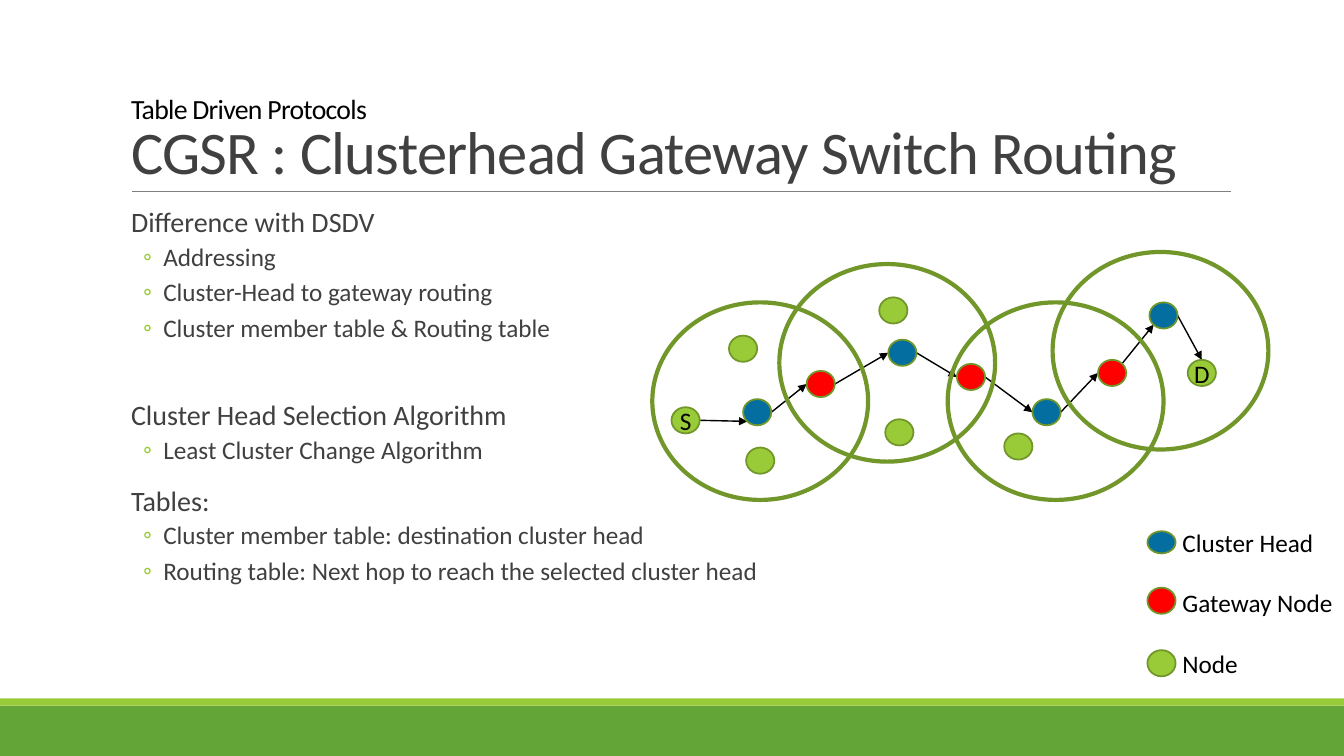
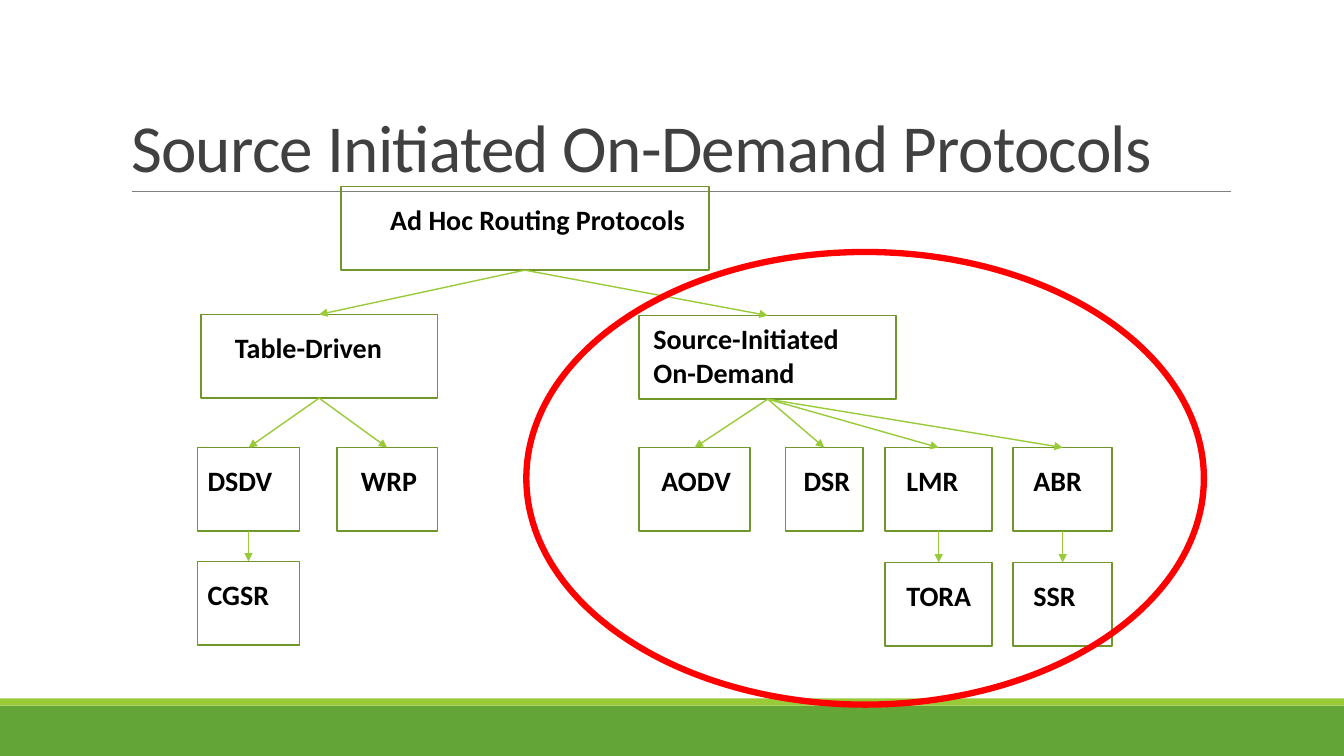
"""Build two slides on ad hoc routing protocols."""
from dataclasses import dataclass
from enum import Enum

import lxml.etree
import pptx
import pptx.dml.color
import pptx.enum.shapes
import pptx.enum.text
import pptx.oxml.ns
import pptx.shapes.autoshape
import pptx.shapes.connector
import pptx.slide
import pptx.text.text
import pptx.util

Inches = pptx.util.Inches
Pt = pptx.util.Pt
qn = pptx.oxml.ns.qn
Shape = pptx.enum.shapes.MSO_SHAPE
Anchor = pptx.enum.text.MSO_ANCHOR
Align = pptx.enum.text.PP_ALIGN

FONT = "Calibri"
BLACK, INK, GREY = "000000", "404040", "808080"
GREEN, LIME, OLIVE = "63A537", "99CB38", "719629"
BLUE, RED = "056EA0", "FF0000"
NODE_W, NODE_H = 0.28, 0.26
CLUSTER_W, CLUSTER_H = 2.14, 1.96
BOX_H = 0.83


class Site(Enum):
    """Points on an ellipse as fractions of its width and height."""
    TOP = (0.5, 0)
    LEFT = (0, 0.5)
    RIGHT = (1, 0.5)
    LOWER_LEFT = (0.15, 0.85)
    UPPER_RIGHT = (0.85, 0.15)


@dataclass(frozen=True)
class Node:
    """A network node in the cluster diagram."""
    left: float
    top: float
    color: str = LIME
    label: str = ""

    def point(self, site: Site) -> tuple[float, float]:
        """Return the position of a site in inches."""
        fx, fy = site.value
        return self.left + fx * NODE_W, self.top + fy * NODE_H


@dataclass(frozen=True)
class Hop:
    """One step of the route between two nodes."""
    start: Node
    end: Node
    leave: Site = Site.RIGHT
    enter: Site = Site.LEFT


@dataclass(frozen=True)
class Box:
    """A box of the protocol tree, with its text insets."""
    name: str
    left: float
    top: float
    width: float
    inset: float
    parent: str = ""
    inset_top: float = 0.16
    inset_right: float = 0


@dataclass(frozen=True)
class Line:
    """A line of the outline."""
    text: str
    level: int = 1
    before: float = 2


SOURCE = Node(6.66, 4.04, label="S")
HEAD_1 = Node(7.37, 3.96, BLUE)
GATE_1 = Node(8, 3.68, RED)
HEAD_2 = Node(8.81, 3.37, BLUE)
GATE_2 = Node(9.49, 3.61, RED)
HEAD_3 = Node(10.24, 3.96, BLUE)
GATE_3 = Node(10.89, 3.57, RED)
HEAD_4 = Node(11.4, 3, BLUE)
DEST = Node(11.78, 3.57, label="D")
ROUTE = [SOURCE, HEAD_1, GATE_1, HEAD_2, GATE_2, HEAD_3, GATE_3, HEAD_4, DEST]
MEMBERS = [Node(7.4, 4.44), Node(7.23, 3.33), Node(8.72, 2.95),
           Node(8.78, 4.16), Node(9.96, 4.3)]
HOPS = [
    Hop(SOURCE, HEAD_1, enter=Site.LOWER_LEFT),
    *(Hop(a, b) for a, b in zip(ROUTE[1:6], ROUTE[2:7])),
    Hop(GATE_3, HEAD_4, Site.UPPER_RIGHT, Site.LOWER_LEFT),
    Hop(HEAD_4, DEST, enter=Site.TOP),
]
CLUSTERS = [(6.47, 3), (7.73, 2.62), (9.4, 3), (10.44, 2.5)]
LEGEND = [("Cluster Head", BLUE, 5.27, 0.22),
          ("Gateway Node", RED, 5.83, NODE_H),
          ("Node", LIME, 6.45, NODE_H)]
OUTLINE = [
    Line("Difference with DSDV", 0, 0),
    Line("Addressing"),
    Line("Cluster-Head to gateway routing"),
    Line("Cluster member table & Routing table"),
    Line("Cluster Head Selection Algorithm", 0, 38),
    Line("Least Cluster Change Algorithm"),
    Line("Tables:", 0, 12),
    Line("Cluster member table: destination cluster head"),
    Line("Routing table: Next hop to reach the selected cluster head"),
]
ROOT, TABLE, DEMAND = ("Ad Hoc Routing Protocols", "Table-Driven",
                       "Source-Initiated On-Demand")
TREE = [
    Box(ROOT, 3.38, 1.85, 3.65, 0.49),
    Box(DEMAND, 6.34, 3.13, 2.55, 0.14, ROOT, 0.06, 0.42),
    Box(TABLE, 1.99, 3.12, 2.35, 0.34, ROOT),
    Box("DSDV", 1.96, 4.44, 1.01, 0.1, TABLE),
    Box("WRP", 3.34, 4.44, 1, 0.24, TABLE),
    Box("AODV", 6.34, 4.44, 1.1, 0.22, DEMAND),
    Box("DSR", 7.79, 4.44, 0.77, 0.18, DEMAND),
    Box("LMR", 8.78, 4.44, 1.06, 0.21, DEMAND),
    Box("ABR", 10.05, 4.44, 0.98, 0.2, DEMAND),
    Box("TORA", 8.78, 5.58, 1.06, 0.21, "LMR"),
    Box("SSR", 10.05, 5.58, 0.98, 0.2, "ABR"),
    Box("CGSR", 1.96, 5.57, 1.01, 0.1, "DSDV"),
]


def rgb(color: str) -> pptx.dml.color.RGBColor:
    """Turn a hex string into a colour."""
    return pptx.dml.color.RGBColor.from_string(color)


def write(p: pptx.text.text._Paragraph, text: str, *, size: float = 18,
          color: str = BLACK, bold: bool = False, spacing: int = 0) -> None:
    """Add a formatted run to a paragraph."""
    r = p.add_run()
    r.text = text
    r.font.name, r.font.size, r.font.bold = FONT, Pt(size), bold
    r.font.color.rgb = rgb(color)
    if spacing:
        r.font.element.set("spc", str(spacing)) if hasattr(r.font, "element") else \
            r._r.get_or_add_rPr().set("spc", str(spacing))


def set_insets(tf: pptx.text.text.TextFrame, left: float, top: float,
               right: float, bottom: float) -> None:
    """Set the four text insets in inches."""
    tf.margin_left, tf.margin_top = Inches(left), Inches(top)
    tf.margin_right, tf.margin_bottom = Inches(right), Inches(bottom)


def add_shape(s: pptx.slide.Slide, kind: Shape, left: float, top: float,
              width: float, height: float, *, fill: str = "", line: str = "",
              weight: float = 1.25) -> pptx.shapes.autoshape.Shape:
    """Draw a flat preset shape."""
    sp = s.shapes.add_shape(kind, Inches(left), Inches(top),
                            Inches(width), Inches(height))
    sp.shadow.inherit = False
    if fill:
        sp.fill.solid()
        sp.fill.fore_color.rgb = rgb(fill)
    else:
        sp.fill.background()
    if line:
        sp.line.color.rgb = rgb(line)
        sp.line.width = Pt(weight)
    else:
        sp.line.fill.background()
    return sp


def add_line(s: pptx.slide.Slide, start: tuple[float, float],
             end: tuple[float, float], color: str, weight: float = 1,
             arrow: bool = True) -> pptx.shapes.connector.Connector:
    """Draw a straight line, with an arrowhead at its end if asked."""
    c = s.shapes.add_connector(pptx.enum.shapes.MSO_CONNECTOR.STRAIGHT,
                               *(Inches(v) for v in (*start, *end)))
    c.line.color.rgb = rgb(color)
    c.line.width = Pt(weight)
    props = c.element.spPr
    if arrow:
        lxml.etree.SubElement(props.find(qn("a:ln")), qn("a:tailEnd"), type="triangle")
    lxml.etree.SubElement(props, qn("a:effectLst"))
    return c


def add_textbox(s: pptx.slide.Slide, left: float, top: float, width: float,
                height: float) -> pptx.text.text.TextFrame:
    """Add a wrapping text box and return its frame."""
    tf = s.shapes.add_textbox(Inches(left), Inches(top),
                              Inches(width), Inches(height)).text_frame
    tf.word_wrap = True
    return tf


def dress_layout(layout: pptx.slide.SlideLayout, s: pptx.slide.Slide) -> None:
    """Put the bands and title rule on the layout that slides share."""
    for ph in list(layout.placeholders)[1:]:
        layout.shapes.element.remove(ph.element)
    decor = [
        add_shape(s, Shape.RECTANGLE, 0, 7, 13.33, 0.5, fill=GREEN),
        add_shape(s, Shape.RECTANGLE, 0, 6.93, 13.33, 0.07, fill=LIME),
        add_line(s, (1.31, 1.9), (12.21, 1.9), GREY, 0.5, arrow=False),
    ]
    for item in decor:
        layout.shapes.element.append(item.element)


def set_title(s: pptx.slide.Slide, *lines: tuple[str, float, str]) -> None:
    """Place the title and write its lines of text, size and colour."""
    sp = s.shapes.title
    sp.left, sp.top = Inches(1.2), Inches(0.31)
    sp.width, sp.height = Inches(11), Inches(1.59)
    tf = sp.text_frame
    tf.vertical_anchor = Anchor.BOTTOM
    tf.auto_size = pptx.enum.text.MSO_AUTO_SIZE.NONE
    for i, (text, size, color) in enumerate(lines):
        p = tf.add_paragraph() if i else tf.paragraphs[0]
        p.alignment, p.line_spacing = Align.LEFT, 0.85
        p.space_before = Pt(0)
        write(p, text, size=size, color=color, spacing=-50)


def add_outline(s: pptx.slide.Slide) -> None:
    """Write the two-level outline."""
    tf = add_textbox(s, 1.2, 2.02, 11, 4.4)
    set_insets(tf, 0, 0.05, 0, 0.05)
    for i, item in enumerate(OUTLINE):
        p = tf.add_paragraph() if i else tf.paragraphs[0]
        props = p._p.get_or_add_pPr()
        props.set("marL", str(Inches(0.42 if item.level else 0.1)))
        if item.level:
            props.set("indent", str(Inches(-0.2)))
            clr = lxml.etree.SubElement(props, qn("a:buClr"))
            lxml.etree.SubElement(clr, qn("a:srgbClr"), val=LIME)
            lxml.etree.SubElement(props, qn("a:buFont"), typeface=FONT)
            lxml.etree.SubElement(props, qn("a:buChar"), char="◦")
        p.level, p.line_spacing = item.level, 0.9
        p.space_before, p.space_after = Pt(item.before), Pt(4 if item.level else 2)
        write(p, item.text, size=18 if item.level else 20, color=INK)


def add_clusters(s: pptx.slide.Slide) -> None:
    """Draw the clusters, their nodes, the route and the legend."""
    for hop in HOPS:
        add_line(s, hop.start.point(hop.leave), hop.end.point(hop.enter), BLACK)
    for left, top in CLUSTERS:
        add_shape(s, Shape.OVAL, left, top, CLUSTER_W, CLUSTER_H, line=OLIVE, weight=3)
    for node in ROUTE + MEMBERS:
        sp = add_shape(s, Shape.OVAL, node.left, node.top, NODE_W, NODE_H,
                       fill=node.color, line=OLIVE)
        if node.label:
            tf = sp.text_frame
            set_insets(tf, 0, 0, 0, 0)
            tf.word_wrap, tf.vertical_anchor = False, Anchor.MIDDLE
            tf.paragraphs[0].alignment = Align.CENTER
            write(tf.paragraphs[0], node.label)
    for i, (name, color, top, height) in enumerate(LEGEND):
        add_shape(s, Shape.OVAL, 11.38, top, NODE_W, height, fill=color, line=OLIVE)
        tf = add_textbox(s, 11.63, 5.18 + 0.6 * i, 1.7, 0.4)
        tf.margin_right = 0
        write(tf.paragraphs[0], name)


def add_tree(s: pptx.slide.Slide) -> None:
    """Draw the protocol tree and join each box to its parent."""
    drawn = {}
    for box in TREE:
        sp = add_shape(s, Shape.RECTANGLE, box.left, box.top, box.width, BOX_H, line=OLIVE)
        tf = sp.text_frame
        set_insets(tf, box.inset, box.inset_top, box.inset_right, 0)
        tf.word_wrap, tf.vertical_anchor = True, Anchor.TOP
        tf.paragraphs[0].alignment = Align.LEFT
        write(tf.paragraphs[0], box.name, size=20, bold=True)
        drawn[box.name] = sp
    for box in TREE:
        if box.parent:
            c = add_line(s, (0, 0), (1, 1), LIME)
            c.begin_connect(drawn[box.parent], 2)
            c.end_connect(drawn[box.name], 0)


def main() -> None:
    """Build and save the presentation."""
    prs = pptx.Presentation()
    prs.slide_width, prs.slide_height = Inches(13.33), Inches(7.5)
    layout = prs.slide_layouts[5]

    s = prs.slides.add_slide(layout)
    dress_layout(layout, s)
    set_title(s, ("Table Driven Protocols", 19.8, BLACK),
              ("CGSR : Clusterhead Gateway Switch Routing", 43.2, INK))
    add_outline(s)
    add_clusters(s)

    s = prs.slides.add_slide(layout)
    set_title(s, ("Source Initiated On-Demand Protocols", 48, INK))
    add_tree(s)
    add_shape(s, Shape.OVAL, 5.22, 2.5, 6.72, 4.49, line=RED, weight=4.5)

    prs.save("out.pptx")


if __name__ == "__main__":
    main()
